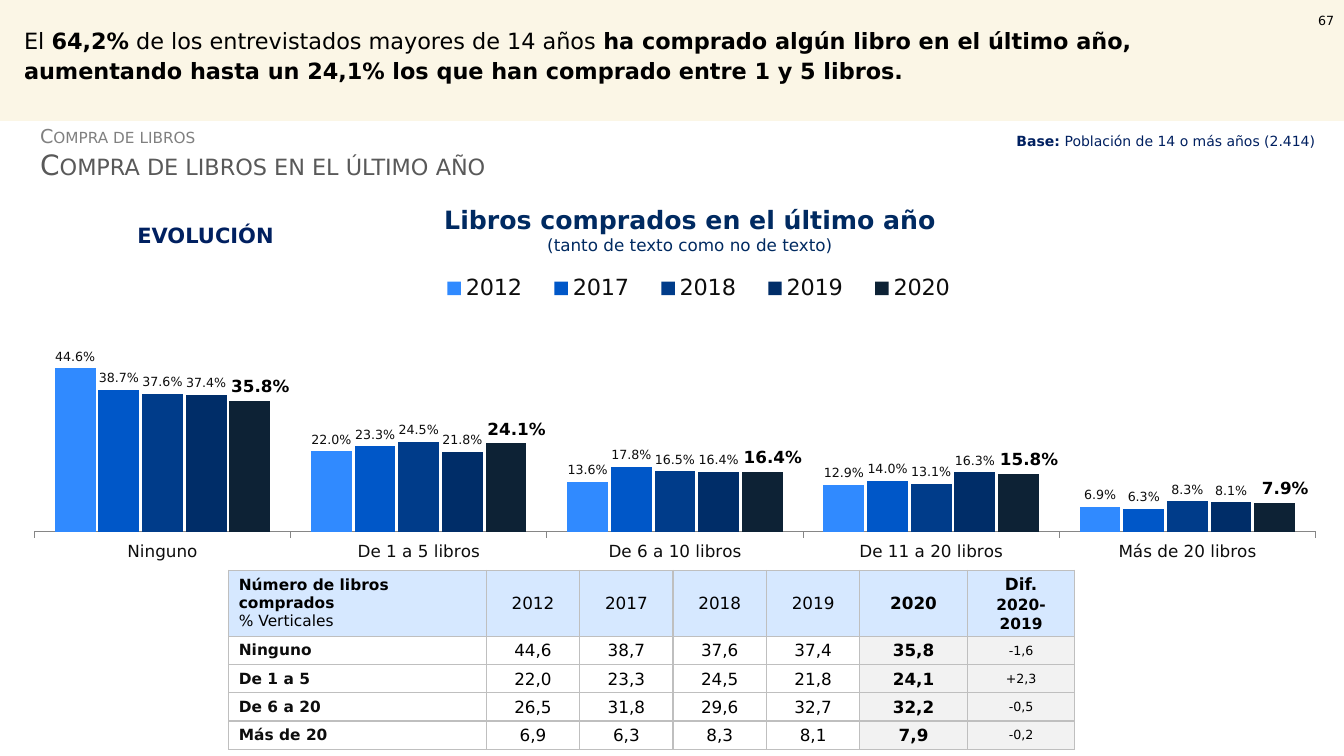
from dataclasses import dataclass

from lxml import etree
from pptx import Presentation
from pptx.chart.data import CategoryChartData
from pptx.dml.color import RGBColor
from pptx.enum.chart import XL_CHART_TYPE, XL_LABEL_POSITION, XL_LEGEND_POSITION, XL_TICK_MARK
from pptx.enum.shapes import MSO_SHAPE
from pptx.enum.text import MSO_ANCHOR, MSO_AUTO_SIZE, PP_ALIGN
from pptx.oxml import parse_xml
from pptx.oxml.ns import nsdecls, qn
from pptx.util import Pt

LEFT, CENTER, RIGHT = PP_ALIGN.LEFT, PP_ALIGN.CENTER, PP_ALIGN.RIGHT
TOP, MIDDLE = MSO_ANCHOR.TOP, MSO_ANCHOR.MIDDLE
TITLE_ONLY = 5


@dataclass(frozen=True)
class Theme:
    font: str = "DejaVu Sans"
    black: str = "000000"
    ink: str = "0D0D0D"
    navy: str = "002060"
    chart_title: str = "002A61"
    section: str = "808080"
    heading: str = "595959"
    band: str = "FAF3DE"
    axis: str = "868686"
    border: str = "BFBFBF"
    header_fill: str = "D6E8FF"
    latest_fill: str = "F2F2F2"
    series: tuple = ("CC1417", "308AFF", "0057C8", "003C8A", "002D68", "0D2235")
    tiny: float = 9
    note: float = 10
    table: float = 11
    body: float = 12
    section_size: float = 13.7
    label: float = 15
    headline: float = 16
    chart_title_size: float = 18
    heading_size: float = 20


T = Theme()
EMPTY_YEAR = "2011"
YEARS = ("2012", "2017", "2018", "2019", "2020")
CHART_ROWS = {
    "Ninguno": (44.6, 38.7, 37.6, 37.4, 35.8),
    "De 1 a 5 libros": (22.0, 23.3, 24.5, 21.8, 24.1),
    "De 6 a 10 libros": (13.6, 17.8, 16.5, 16.4, 16.4),
    "De 11 a 20 libros": (12.9, 14.0, 13.1, 16.3, 15.8),
    "Más de 20 libros": (6.9, 6.3, 8.3, 8.1, 7.9),
}
TABLE_ROWS = (
    ("Ninguno", "44,6", "38,7", "37,6", "37,4", "35,8", "-1,6"),
    ("De 1 a 5", "22,0", "23,3", "24,5", "21,8", "24,1", "+2,3"),
    ("De 6 a 20", "26,5", "31,8", "29,6", "32,7", "32,2", "-0,5"),
    ("Más de 20", "6,9", "6,3", "8,3", "8,1", "7,9", "-0,2"),
)


def rgb(color):
    return RGBColor.from_string(color)


def set_font(font, size, color, bold=False):
    font.name, font.size, font.bold = T.font, Pt(size), bold
    font.color.rgb = rgb(color)


def fill_paragraph(p, runs, size, color, bold=False, align=LEFT, spacing=None):
    """Write (text, overrides) runs, where overrides may hold bold and size."""
    p.alignment = align
    if spacing:
        p.line_spacing = spacing
    set_font(p.font, size, color, bold)
    for text, overrides in runs:
        r = p.add_run()
        r.text = text
        if "bold" in overrides:
            r.font.bold = overrides["bold"]
        if "size" in overrides:
            r.font.size = Pt(overrides["size"])


def add_text(slide, box, runs, size, color, anchor=TOP, small_caps=False, **style):
    tf = slide.shapes.add_textbox(*map(Pt, box)).text_frame
    tf.word_wrap, tf.vertical_anchor = True, anchor
    p = tf.paragraphs[0]
    fill_paragraph(p, runs, size, color, **style)
    if small_caps:
        for r in p.runs:
            r.font._element.set("cap", "small")


def add_headline(slide, box):
    x, y, w, h = box
    band = slide.shapes.add_shape(MSO_SHAPE.RECTANGLE, *map(Pt, box))
    band.shadow.inherit = False
    band.fill.solid()
    band.fill.fore_color.rgb = rgb(T.band)
    band.line.fill.background()
    color = band._element.spPr.find(".//" + qn("a:srgbClr"))
    etree.SubElement(color, qn("a:alpha"), val="75000")
    slide.shapes._spTree.insert(2, band._element)

    title = slide.shapes.title
    title.left, title.top, title.width, title.height = map(Pt, (x + 10, y + 14.2, w - 150, 48))
    tf = title.text_frame
    tf.word_wrap, tf.auto_size, tf.vertical_anchor = True, MSO_AUTO_SIZE.NONE, TOP
    fill_paragraph(tf.paragraphs[0], [
        ("El ", {}), ("64,2%", {"bold": True}),
        (" de los entrevistados mayores de 14 años ", {}),
        ("ha comprado algún libro en el último año, aumentando hasta un 24,1% "
         "los que han comprado entre 1 y 5 libros.", {"bold": True}),
    ], T.headline, T.black, spacing=1.1)
    add_text(slide, (x + w - 45.6, y, 45.6, 28.8), [("67", {})], T.tiny, T.black,
             anchor=MIDDLE, align=RIGHT)


def add_section_heading(slide, box):
    x, y, w, h = box
    add_text(slide, (x, y, 200, 26), [("Compra de libros", {})], T.section_size, T.section,
             anchor=MIDDLE, small_caps=True, spacing=0.9)
    add_text(slide, (x, y + 20, 382, 28), [("Compra de libros en el último año", {})],
             T.heading_size, T.heading, anchor=MIDDLE, small_caps=True, spacing=0.9)
    add_text(slide, (x + w - 241, y + 6.4, 241, 19.4),
             [("Base: ", {"bold": True}), ("Población de 14 o más años (2.414)", {})],
             T.note, T.navy)


def add_chart_title(slide, box):
    x, y, w, h = box
    add_text(slide, (x, y + 13.5, 115, 25), [("EVOLUCIÓN", {})], T.label, T.navy, bold=True)
    add_text(slide, (x + 208.5, y, w - 208.5, h),
             [("Libros comprados en el último año ", {"bold": True}),
              ("(tanto de texto como no de texto)", {"size": T.body})],
             T.chart_title_size, T.chart_title, anchor=MIDDLE, align=CENTER)


def manual_layout(x, y, w=None, h=None, inner=False):
    """Layout element in fractions of the chart; an offset when it has no size."""
    target = '<c:layoutTarget val="inner"/>' if inner else ""
    modes = '<c:xMode val="edge"/><c:yMode val="edge"/>' if w else ""
    size = f'<c:w val="{w}"/><c:h val="{h}"/>' if w else ""
    return parse_xml(f'<c:layout {nsdecls("c")}><c:manualLayout>{target}{modes}'
                     f'<c:x val="{x}"/><c:y val="{y}"/>{size}</c:manualLayout></c:layout>')


def shift_latest_labels(series):
    """Move the bold labels right, clear of the preceding year's."""
    for i in range(len(CHART_ROWS)):
        label = series.points[i].data_label
        set_font(label.font, T.body, T.black, True)
        label.position = XL_LABEL_POSITION.OUTSIDE_END
    for d in series.data_labels._element.findall(qn("c:dLbl")):
        d.insert(1, manual_layout(0.008, 0))
        d.insert(2, parse_xml(f'<c:numFmt {nsdecls("c")} formatCode="0.0&quot;%&quot;" '
                              'sourceLinked="0"/>'))


def add_evolution_chart(slide, box):
    data = CategoryChartData(number_format="0.0")
    data.categories = list(CHART_ROWS)
    data.add_series(EMPTY_YEAR, ())
    for year, values in zip(YEARS, zip(*CHART_ROWS.values())):
        data.add_series(year, values)
    chart = slide.shapes.add_chart(XL_CHART_TYPE.COLUMN_CLUSTERED, *map(Pt, box), data).chart
    set_font(chart.font, T.body, T.ink)
    chart.has_title = False
    chart.has_legend = True
    legend = chart.legend
    legend.position, legend.include_in_layout = XL_LEGEND_POSITION.TOP, False
    set_font(legend.font, T.headline, T.ink)
    legend._element.find(qn("c:legendPos")).addnext(manual_layout(0.31, 0.01, 0.42, 0.11))

    axis = chart.value_axis
    axis.minimum_scale, axis.maximum_scale = 0, 65
    axis.has_major_gridlines = axis.visible = False
    axis = chart.category_axis
    axis.major_tick_mark = XL_TICK_MARK.OUTSIDE
    axis.format.line.color.rgb = rgb(T.axis)
    set_font(axis.tick_labels.font, T.body, T.ink)

    plot = chart.plots[0]
    plot.gap_width, plot.overlap, plot.vary_by_categories = 100, -7, False
    all_series = list(plot.series)
    for series, color in zip(all_series, T.series):
        series.format.fill.solid()
        series.format.fill.fore_color.rgb = rgb(color)
        labels = series.data_labels
        labels.show_value, labels.position = True, XL_LABEL_POSITION.OUTSIDE_END
        labels.number_format, labels.number_format_is_linked = '0.0"%"', False
        set_font(labels.font, T.tiny, T.ink)
    shift_latest_labels(all_series[-1])
    empty = all_series[0]._element
    empty.remove(empty.find(qn("c:val")))
    area = chart._chartSpace.find(".//" + qn("c:plotArea"))
    for old in area.findall(qn("c:layout")):
        area.remove(old)
    area.insert(0, manual_layout(0.015, 0.082, 0.974, 0.82, inner=True))


def style_cell(cell, margins, fill=None):
    tcPr = cell._tc.get_or_add_tcPr()
    for side in "LRTB":
        tcPr.append(parse_xml(f'<a:ln{side} {nsdecls("a")} w="12700"><a:solidFill>'
                              f'<a:srgbClr val="{T.border}"/></a:solidFill></a:ln{side}>'))
    cell.margin_left, cell.margin_top, cell.margin_right, cell.margin_bottom = map(Pt, margins)
    cell.vertical_anchor = MIDDLE
    if fill:
        cell.fill.solid()
        cell.fill.fore_color.rgb = rgb(fill)
    else:
        cell.fill.background()


def add_purchase_table(slide, box):
    frame = slide.shapes.add_table(len(TABLE_ROWS) + 1, len(YEARS) + 2, *map(Pt, box))
    table = frame.table
    for col, width in zip(table.columns, (184, 66.7, 66.7, 66.7, 66.7, 76.8, 76.8)):
        col.width = Pt(width)
    for i, row in enumerate(table.rows):
        row.height = Pt(20.1 if i else 47.2)

    for c, text in enumerate(("Número de libros comprados", *YEARS, "Dif.")):
        cell = table.cell(0, c)
        style_cell(cell, (7.2, 2.1, 7.2, 2.1), T.header_fill)
        p = cell.text_frame.paragraphs[0]
        fill_paragraph(p, [(text, {})], T.body if c else T.table, T.black,
                       bold=c in (0, 5, 6), align=CENTER if c else LEFT,
                       spacing=1.05 if c else None)
    p.add_line_break()
    r = p.add_run()
    r.text, r.font.size = "2020-2019", Pt(T.table)
    fill_paragraph(table.cell(0, 0).text_frame.add_paragraph(), [("% Verticales", {})],
                   T.table, T.black)

    sizes = (T.table, *[T.body] * len(YEARS), T.tiny)
    for i, values in enumerate(TABLE_ROWS, 1):
        for c, text in enumerate(values):
            cell = table.cell(i, c)
            style_cell(cell, (0.7, 0.7, 0.7, 0) if c else (7.2, 3.2, 7.2, 3.2),
                       T.latest_fill if c >= 5 else None)
            fill_paragraph(cell.text_frame.paragraphs[0], [(text, {})], sizes[c],
                           T.black if c else T.ink, bold=c in (0, 5),
                           align=CENTER if c else LEFT)


def main():
    prs = Presentation()
    prs.slide_width, prs.slide_height = Pt(960), Pt(540)
    slide = prs.slides.add_slide(prs.slide_layouts[TITLE_ONLY])
    add_headline(slide, (0, 0, 960, 86.4))
    add_section_heading(slide, (21.6, 85, 938.4, 48))
    add_chart_title(slide, (91, 142.2, 595.2, 43.2))
    add_evolution_chart(slide, (10.5, 192.5, 939.6, 208.8))
    add_purchase_table(slide, (163.4, 407.5, 604.4, 127.6))
    prs.save("out.pptx")


if __name__ == "__main__":
    main()
